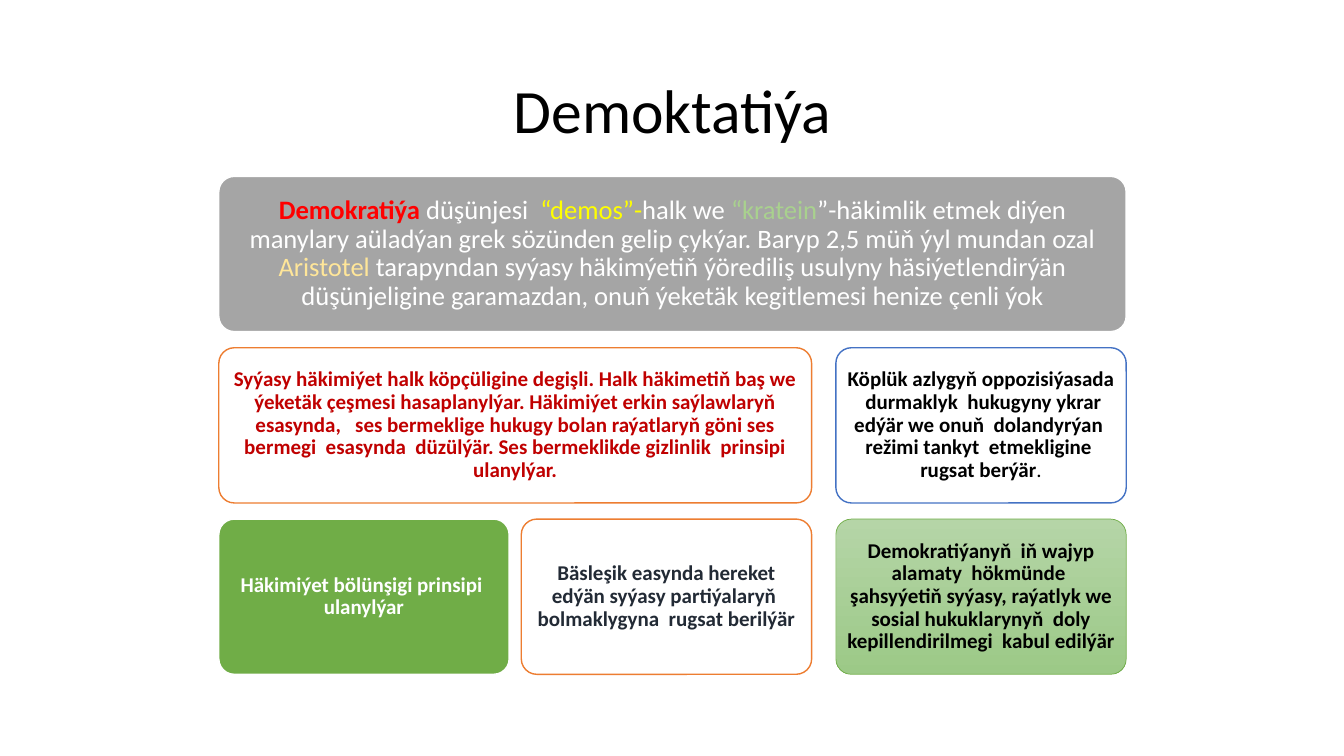
from pptx import Presentation
from pptx.dml.color import RGBColor
from pptx.enum.shapes import MSO_SHAPE
from pptx.enum.text import MSO_ANCHOR, PP_ALIGN
from pptx.util import Inches, Pt

COLORS = {
    "black": "000000", "white": "FFFFFF", "gray": "A5A5A5", "navy": "222A35",
    "red": "FF0000", "dark red": "C00000", "orange": "ED7D31", "blue": "4472C4",
    "yellow": "FFFF00", "sand": "FFE699", "green": "70AD47", "light green": "A9D18E",
    "gradient top": "B5D5A7", "gradient bottom": "9CC987",
}
FONT = "Calibri"

# Grid: three card columns, with a wider gap before the last one
CARD_WIDTH, CARD_HEIGHT = 2.88, 1.54
COLUMNS = (2.17, 5.17, 8.29)
TOP, ROW_STEP = 1.75, 1.7


def rgb(name):
    return RGBColor.from_string(COLORS[name])


def write_centered(frame, spans, size, inset):
    """Fill a frame with one paragraph of (text, color, bold) spans."""
    frame.word_wrap = True
    frame.vertical_anchor = MSO_ANCHOR.MIDDLE
    frame.margin_left = frame.margin_right = Inches(inset)
    frame.margin_top = frame.margin_bottom = Inches(inset)
    para = frame.paragraphs[0]
    para.alignment = PP_ALIGN.CENTER
    para.line_spacing = 0.9
    for text, color, bold in spans:
        span = para.add_run()
        span.text = text
        span.font.name = FONT
        span.font.size = Pt(size)
        span.font.bold = bold
        span.font.color.rgb = rgb(color)


deck = Presentation()
deck.slide_width, deck.slide_height = Inches(13.33), Inches(7.5)
page = deck.slides.add_slide(deck.slide_layouts[5])

title = page.shapes.title
title.left, title.top = Inches(0.92), Inches(0.4)
title.width, title.height = Inches(11.5), Inches(1.45)
write_centered(title.text_frame, [("Demoktatiýa", "black", False)], 44, 0.05)

definition = [
    ("Demokratiýa", "red", True),
    (" düşünjesi  ", "white", False),
    ("“demos”-", "yellow", False),
    ("halk we ", "white", False),
    ("“kratein", "light green", False),
    ("”-häkimlik etmek diýen manylary aüladýan grek sözünden gelip çykýar. "
     "Baryp 2,5 müň ýyl mundan ozal ", "white", False),
    ("Aristotel", "sand", False),
    (" tarapyndan syýasy häkimýetiň ýörediliş usulyny häsiýetlendirýän "
     "düşünjeligine garamazdan, onuň ýeketäk kegitlemesi henize çenli ýok", "white", False),
]
people_power = [
    ("Syýasy häkimiýet halk köpçüligine degişli. Halk häkimetiň baş we ýeketäk çeşmesi "
     "hasaplanylýar. Häkimiýet erkin saýlawlaryň esasynda,   ses bermeklige hukugy bolan "
     "raýatlaryň göni ses bermegi  esasynda  düzülýär. Ses bermeklikde gizlinlik  prinsipi "
     "ulanylýar.", "dark red", True),
]
separation = [("Häkimiýet bölünşigi prinsipi  ulanylýar", "white", True)]
parties = [
    ("Bäsleşik easynda hereket edýän syýasy partiýalaryň  bolmaklygyna  rugsat berilýär",
     "navy", True),
]
opposition = [
    ("Köplük azlygyň oppozisiýasada  durmaklyk  hukugyny ykrar edýär we onuň  dolandyrýan  "
     "režimi tankyt  etmekligine  rugsat berýär", "black", True),
    (".", "black", False),
]
rights = [
    ("Demokratiýanyň  iň wajyp alamaty  hökmünde  şahsyýetiň syýasy, raýatlyk we sosial "
     "hukuklarynyň  doly kepillendirilmegi  kabul edilýär", "black", True),
]

# row, first column, last column, fill (None = gradient), line, line width, size, inset, spans
cards = [
    (0, 0, 2, "gray", "white", 1, 19, 0.08, definition),
    (1, 0, 1, "white", "orange", 1, 15, 0.06, people_power),
    (2, 0, 0, "green", "white", 1, 15, 0.06, separation),
    (2, 1, 1, "white", "orange", 1, 15, 0.06, parties),
    (1, 2, 2, "white", "blue", 1, 15, 0.06, opposition),
    (2, 2, 2, None, "green", 0.5, 15, 0.06, rights),
]
for row, first, last, fill, line, line_width, size, inset, spans in cards:
    width = COLUMNS[last] + CARD_WIDTH - COLUMNS[first]
    box = page.shapes.add_shape(
        MSO_SHAPE.ROUNDED_RECTANGLE, Inches(COLUMNS[first]), Inches(TOP + row * ROW_STEP),
        Inches(width), Inches(CARD_HEIGHT))
    box.adjustments[0] = 0.1
    box.shadow.inherit = False
    if fill:
        box.fill.solid()
        box.fill.fore_color.rgb = rgb(fill)
    else:
        box.fill.gradient()
        box.fill.gradient_angle = 270
        for stop, name in zip(box.fill.gradient_stops, ("gradient top", "gradient bottom")):
            stop.color.rgb = rgb(name)
    box.line.color.rgb = rgb(line)
    box.line.width = Pt(line_width)
    write_centered(box.text_frame, spans, size, inset)

deck.save("out.pptx")
